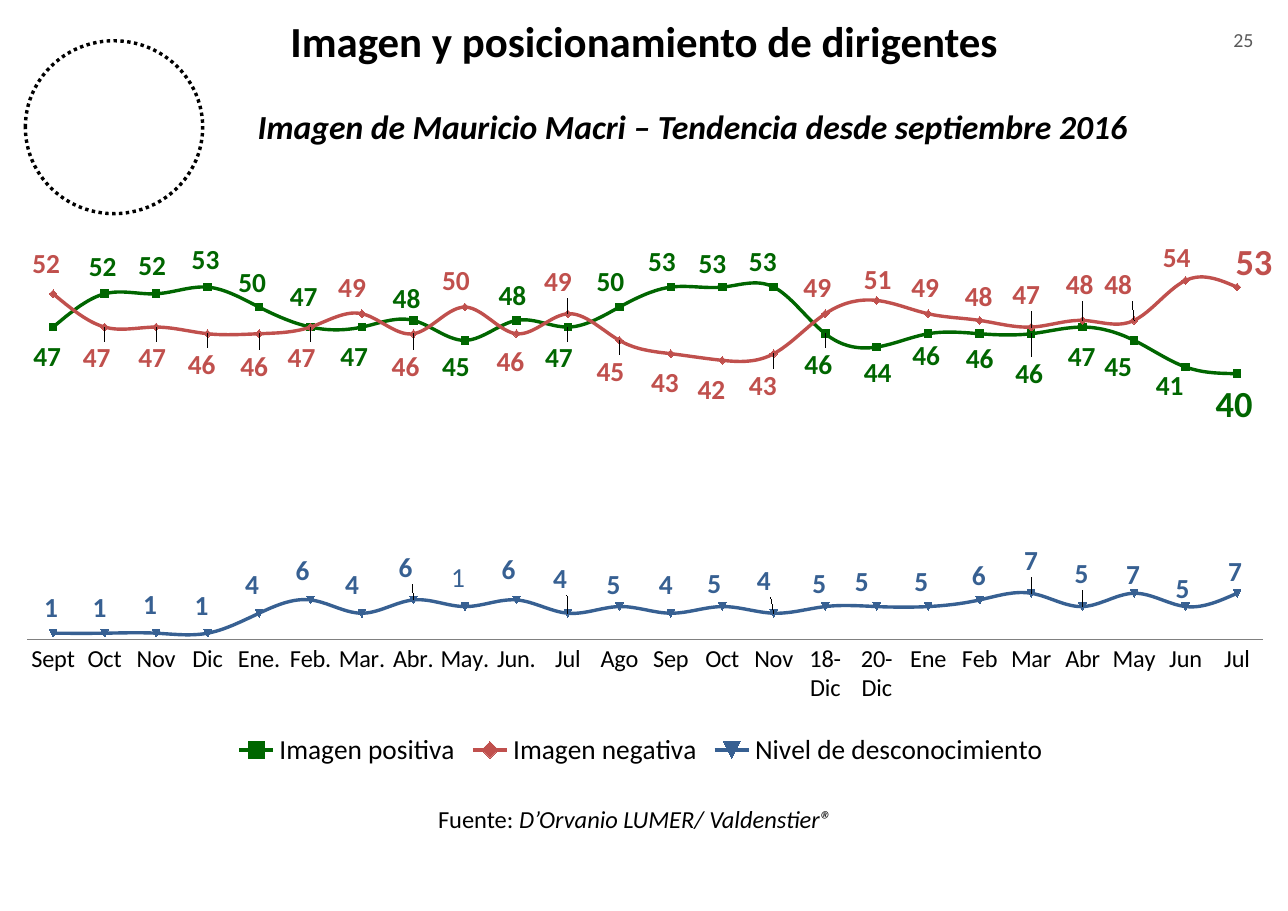
from lxml.etree import SubElement
from pptx import Presentation
from pptx.chart.data import CategoryChartData
from pptx.dml.color import RGBColor
from pptx.enum.chart import (XL_CHART_TYPE, XL_LABEL_POSITION, XL_LEGEND_POSITION,
                             XL_MARKER_STYLE, XL_TICK_MARK)
from pptx.enum.dml import MSO_LINE
from pptx.enum.shapes import MSO_SHAPE
from pptx.enum.text import MSO_ANCHOR, PP_ALIGN
from pptx.oxml.ns import qn
from pptx.util import Inches, Pt

BLACK = RGBColor(0x00, 0x00, 0x00)
GRAY = RGBColor(0x59, 0x59, 0x59)
RULE = RGBColor(0x80, 0x80, 0x80)
GREEN = RGBColor(0x00, 0x66, 0x00)
RED = RGBColor(0xC0, 0x50, 0x4D)
BLUE = RGBColor(0x37, 0x60, 0x92)
FACE = "Calibri"

TITLE = "Imagen y posicionamiento de dirigentes"
HEAD = "Imagen de Mauricio Macri – Tendencia desde septiembre 2016"
PAGE = "25"
SOURCE = ("Fuente: ", "D’Orvanio LUMER/ Valdenstier®")
MONTHS = ["Sept", "Oct", "Nov", "Dic", "Ene.", "Feb.", "Mar.", "Abr.", "May.", "Jun.",
          "Jul", "Ago", "Sep", "Oct", "Nov", "18-Dic", "20-Dic", "Ene", "Feb", "Mar",
          "Abr", "May", "Jun", "Jul"]

GOOD = [(47, -6, 30), (52, -2, -27), (52, -4, -28), (53, -2, -27), (50, -7, -24),
        (47, -7, -30), (47, -8, 30), (48, -7, -22), (45, -9, 26), (48, -4, -25),
        (47, -9, 31), (50, -9, -25), (53, -9, -25), (53, -10, -24), (53, -11, -25),
        (46, -7, 31), (44, 1, 26), (46, -2, 22), (46, 0, 25), (46, -2, 40),
        (47, -1, 30), (45, -16, 26), (41, -16, 19), (40, -3, 32)]
BAD = [(52, -7, -30), (47, -8, 31), (47, -4, 31), (46, -6, 31), (46, -5, 33),
       (47, -9, 31), (49, -10, -26), (46, -8, 33), (50, -9, -26), (46, -6, 28),
       (49, -10, -32), (45, -9, 31), (43, -6, 29), (42, -11, 30), (43, -11, 32),
       (49, -8, -26), (51, 1, -21), (49, -3, -26), (48, -1, -24), (47, -5, -32),
       (48, -3, -36), (48, -16, -36), (54, -9, -23), (53, 17, -24)]
BLANK = [(1, -2, -26), (1, -5, -26), (1, -6, -29), (1, -6, -28), (4, -7, -29),
         (6, -8, -29), (4, -10, -29), (6, -8, -32), (5, -7, -29), (6, -8, -30),
         (4, -8, -35), (5, -6, -22), (4, -5, -29), (5, -8, -23), (4, -10, -33),
         (5, -6, -23), (5, -15, -25), (5, -7, -25), (6, -1, -24), (7, 0, -33),
         (5, -1, -33), (7, -1, -19), (5, -3, -18), (7, -2, -22)]
LINES = [("Imagen positiva", GREEN, GOOD), ("Imagen negativa", RED, BAD),
         ("Nivel de desconocimiento", BLUE, BLANK)]
SIZES = {("Imagen positiva", 23): 24, ("Imagen negativa", 23): 24}
TEXTS = {("Nivel de desconocimiento", 8): "1"}
WIDE, TALL = 1250, 550


def style(font, size, color=BLACK, bold=False, slant=False):
    font.name, font.size, font.bold, font.italic = FACE, Pt(size), bold, slant
    font.color.rgb = color


def write(par, text, *look):
    run = par.add_run()
    run.text = text
    style(run.font, *look)


def add_box(area, align, *runs):
    box = slide.shapes.add_textbox(*map(Inches, area))
    box.text_frame.word_wrap = True
    par = box.text_frame.paragraphs[0]
    par.alignment = align
    for run in runs:
        write(par, *run)


def set_place(node, index, **parts):
    for old in node.findall(qn("c:layout")):
        node.remove(old)
    place = SubElement(node, qn("c:layout"))
    manual = SubElement(place, qn("c:manualLayout"))
    for name, val in parts.items():
        SubElement(manual, qn("c:" + name)).set("val", str(val))
    node.insert(index, place)


def add_label(series, index, row, name, color):
    label = series.points[index].data_label
    size = SIZES.get((name, index), 18)
    text = TEXTS.get((name, index))
    if text:
        write(label.text_frame.paragraphs[0], text, size, color)
    else:
        style(label.font, size, color, True)
    label.position = XL_LABEL_POSITION.CENTER
    node = series._element.xpath(f"c:dLbls/c:dLbl[c:idx/@val='{index}']")[0]
    set_place(node, 1, x=round(row[1] / WIDE, 4), y=round(row[2] / TALL, 4))


deck = Presentation()
deck.slide_width, deck.slide_height = Inches(11.69), Inches(8.27)
slide = deck.slides.add_slide(deck.slide_layouts[5])

title = slide.shapes.title
title.left, title.top, title.width, title.height = map(Inches, (0, -0.1, 11.69, 0.94))
title.text_frame.vertical_anchor = MSO_ANCHOR.MIDDLE
par = title.text_frame.paragraphs[0]
par.alignment = PP_ALIGN.CENTER
write(par, TITLE, 28, BLACK, True)

add_box((10.84, 0.2, 0.89, 0.44), PP_ALIGN.CENTER, (PAGE, 13, GRAY))
add_box((2.24, 0.91, 9.44, 0.47), PP_ALIGN.LEFT, (HEAD, 22, BLACK, True, True))
add_box((3.84, 7.25, 3.85, 0.37), PP_ALIGN.CENTER,
        (SOURCE[0], 16), (SOURCE[1], 16, BLACK, False, True))

ring = slide.shapes.add_shape(MSO_SHAPE.OVAL, *map(Inches, (0.23, 0.37, 1.61, 1.57)))
ring.shadow.inherit = False
ring.fill.background()
ring.line.color.rgb = BLACK
ring.line.width = Pt(2.25)
ring.line.dash_style = MSO_LINE.ROUND_DOT

data = CategoryChartData()
data.categories = MONTHS
for name, color, rows in LINES:
    data.add_series(name, [row[0] for row in rows])
chart = slide.shapes.add_chart(XL_CHART_TYPE.LINE_MARKERS,
                               *map(Inches, (0.17, 2.03, 11.38, 4.98)), data).chart
style(chart.font, 18)
chart.has_title = False
chart.has_legend = True
chart.legend.position = XL_LEGEND_POSITION.BOTTOM
chart.legend.include_in_layout = False
style(chart.legend.font, 18)
set_place(chart._chartSpace.chart.plotArea, 0, layoutTarget="inner", xMode="edge",
          yMode="edge", x=0.007, y=0.031, w=0.993, h=0.728)

scale = chart.value_axis
scale.minimum_scale, scale.maximum_scale = 0, 60
scale.has_major_gridlines = False
scale.visible = False
base = chart.category_axis
base.major_tick_mark = base.minor_tick_mark = XL_TICK_MARK.NONE
base.format.line.color.rgb = RULE
base.format.line.width = Pt(0.75)
style(base.tick_labels.font, 16)

for series, (name, color, rows) in zip(chart.plots[0].series, LINES):
    series.smooth = True
    series.format.line.color.rgb = color
    series.format.line.width = Pt(2.25)
    mark = series.marker
    mark.style, mark.size = XL_MARKER_STYLE.AUTOMATIC, 5
    mark.format.fill.solid()
    mark.format.fill.fore_color.rgb = color
    mark.format.line.color.rgb = color
    labels = series.data_labels
    labels.show_value = True
    labels.position = XL_LABEL_POSITION.CENTER
    style(labels.font, 18, color, True)
    for index, row in enumerate(rows):
        add_label(series, index, row, name, color)

deck.save("out.pptx")
